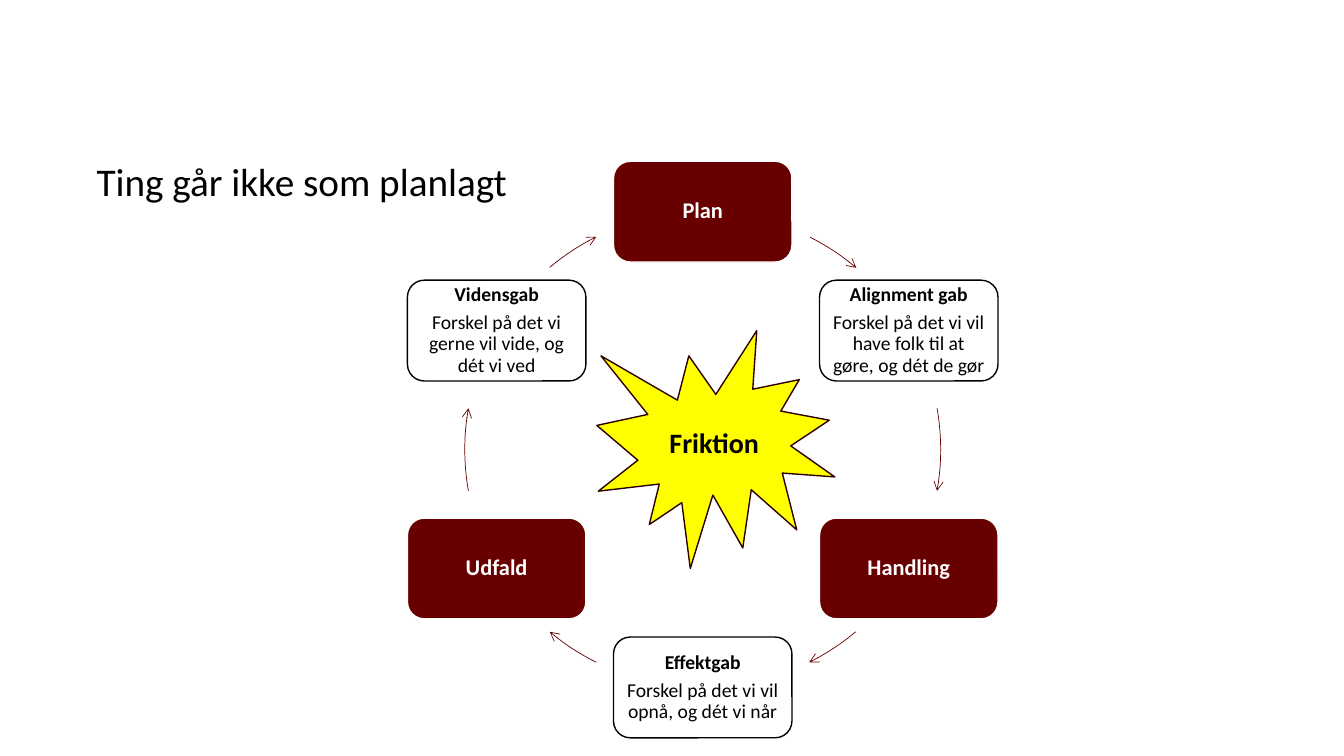
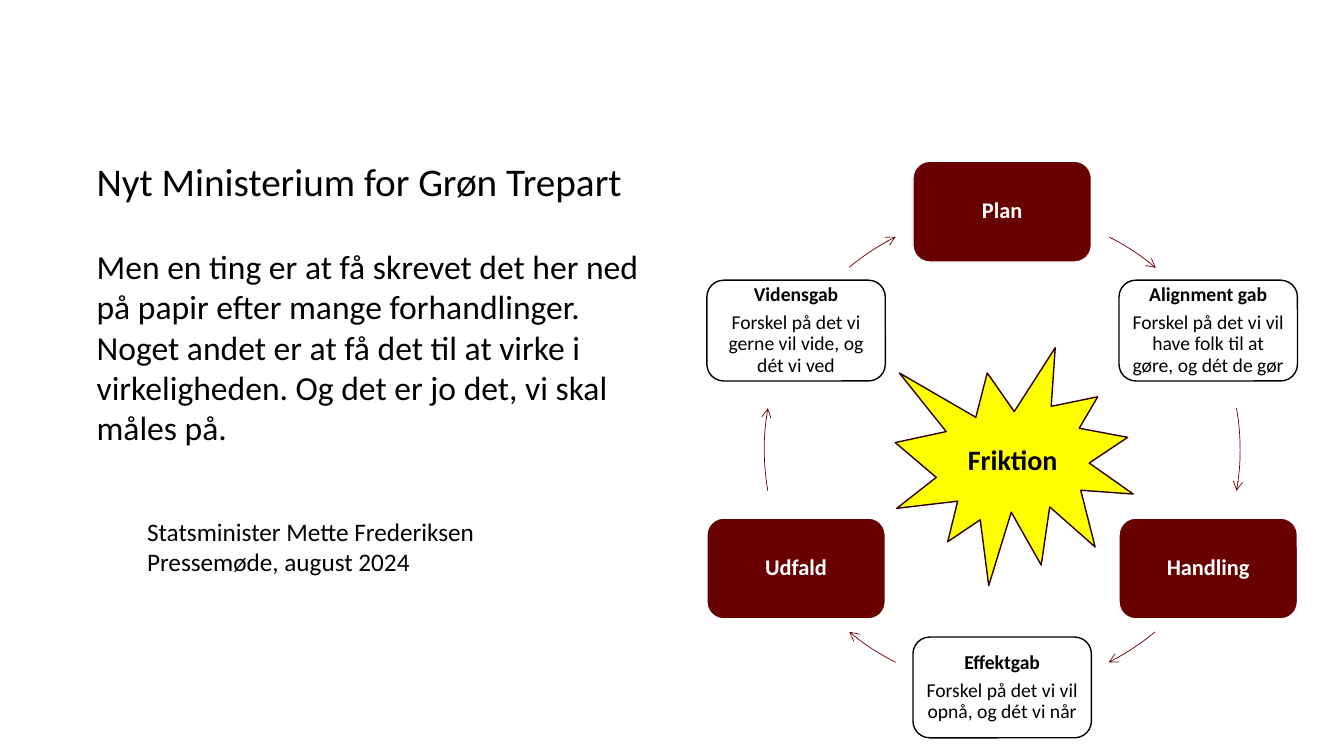
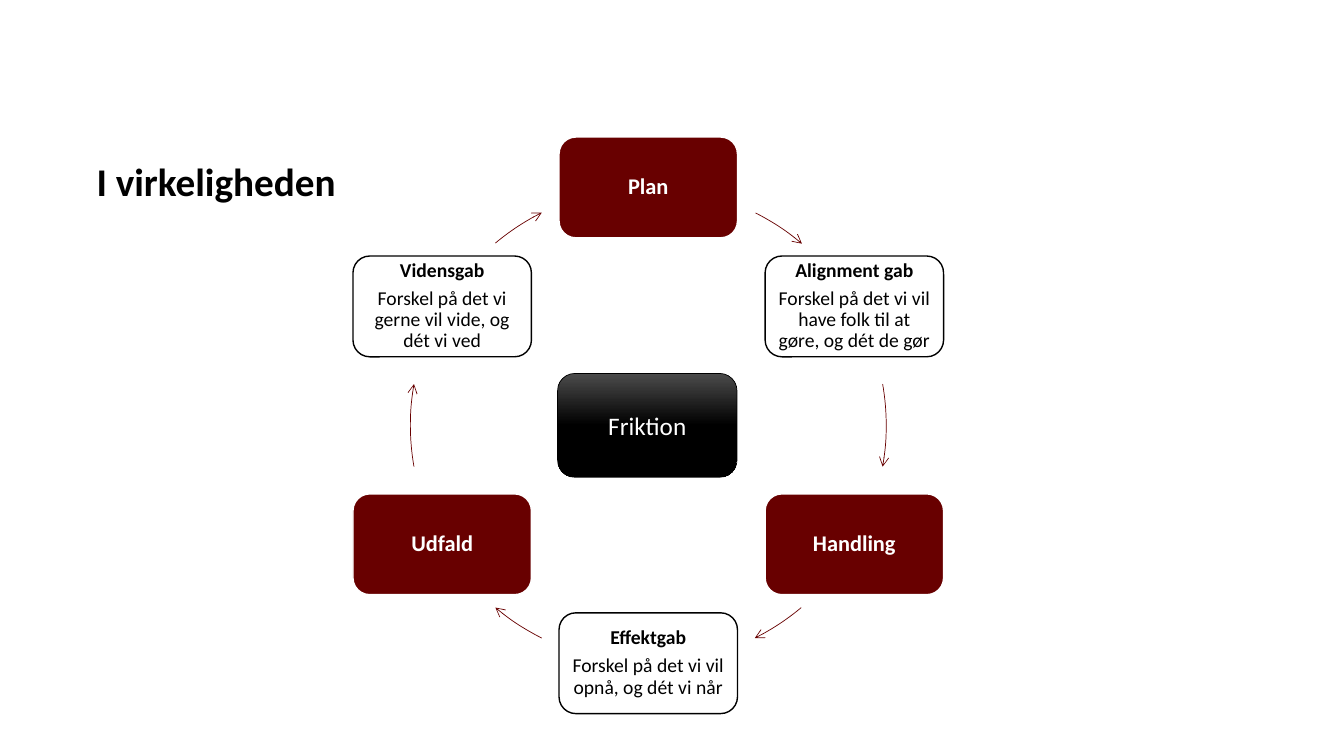
from dataclasses import dataclass
from math import cos, radians, sin

from lxml.etree import SubElement
from pptx import Presentation
from pptx.dml.color import RGBColor
from pptx.enum.shapes import MSO_SHAPE
from pptx.enum.text import MSO_ANCHOR, PP_ALIGN
from pptx.oxml.ns import qn
from pptx.util import Inches, Pt

FONT = "Calibri"
BLACK = "000000"
WHITE = "FFFFFF"
MAROON = "680000"
DARK_MAROON = "2E0000"
YELLOW = "FFFF00"
GLOSS = "4B4B4B"

RADIUS = 2.36
NODE_WIDTH, NODE_HEIGHT = 1.77, 1.0
SEAL_SIZE = 2.36


@dataclass(frozen=True)
class Node:
    heading: str
    detail: str = ""


@dataclass(frozen=True)
class Arc:
    start: float  # degrees clockwise from three o'clock
    end: float


# Clockwise from the top, one node every 60 degrees
NODES = [
    Node("Plan"),
    Node("Alignment gab", "Forskel på det vi vil have folk til at gøre, og dét de gør"),
    Node("Handling"),
    Node("Effektgab", "Forskel på det vi vil opnå, og dét vi når"),
    Node("Udfald"),
    Node("Vidensgab", "Forskel på det vi gerne vil vide, og dét vi ved"),
]
# Each arrow follows the node with the same index
ARCS = [Arc(296.8, 310.2), Arc(350, 10), Arc(50, 63.4),
        Arc(116.6, 130), Arc(170, 190), Arc(230, 243.4)]


def colour(value: str) -> RGBColor:
    return RGBColor.from_string(value)


def style(para, size: float, ink: str = BLACK, bold: bool = False) -> None:
    for span in para.runs:
        span.font.name = FONT
        span.font.size = Pt(size)
        span.font.bold = bold
        span.font.color.rgb = colour(ink)


def add_box(page, kind, center_x: float, center_y: float, width: float, height: float):
    """Add a preset shape around its centre, without a shadow."""
    box = page.shapes.add_shape(
        kind, Inches(center_x - width / 2), Inches(center_y - height / 2),
        Inches(width), Inches(height))
    box.shadow.inherit = False
    return box


def paint(box, fill: str, line: str, weight: float = 1) -> None:
    box.fill.solid()
    box.fill.fore_color.rgb = colour(fill)
    box.line.color.rgb = colour(line)
    box.line.width = Pt(weight)


def add_text(page, left: float, top: float, width: float, height: float, text: str):
    box = page.shapes.add_textbox(Inches(left), Inches(top), Inches(width), Inches(height))
    box.text_frame.word_wrap = True
    box.text_frame.text = text
    return box.text_frame


def add_title(page, text: str, bold: bool = False) -> None:
    frame = add_text(page, 0.86, 1.21, 11.5, 0.87, text)
    frame.vertical_anchor = MSO_ANCHOR.BOTTOM
    frame.paragraphs[0].line_spacing = 0.9
    style(frame.paragraphs[0], 28, bold=bold)


def add_node(page, node: Node, center_x: float, center_y: float) -> None:
    box = add_box(page, MSO_SHAPE.ROUNDED_RECTANGLE, center_x, center_y,
                  NODE_WIDTH, NODE_HEIGHT)
    is_gap = bool(node.detail)
    paint(box, *((WHITE, BLACK) if is_gap else (MAROON, WHITE)))
    size, ink, inset = (14, BLACK, 0.06) if is_gap else (16, WHITE, 0.07)

    frame = box.text_frame
    frame.word_wrap = True
    frame.vertical_anchor = MSO_ANCHOR.MIDDLE
    frame.margin_left = frame.margin_right = Inches(inset)
    frame.margin_top = frame.margin_bottom = Inches(inset)
    frame.text = f"{node.heading}\n{node.detail}" if is_gap else node.heading
    for index, para in enumerate(frame.paragraphs):
        para.alignment = PP_ALIGN.CENTER
        para.line_spacing = 0.9
        para.space_after = Pt(size * 0.35)
        style(para, size, ink, bold=index == 0)


def add_arc(page, arc: Arc, center_x: float, center_y: float) -> None:
    box = add_box(page, MSO_SHAPE.ARC, center_x, center_y, 2 * RADIUS, 2 * RADIUS)
    # Adjustments count in units of 100000, angles in units of 60000
    box.adjustments[0] = arc.start * 0.6
    box.adjustments[1] = arc.end * 0.6
    box.fill.background()
    box.line.color.rgb = colour(MAROON)
    box.line.width = Pt(0.5)
    SubElement(box.line._get_or_add_ln(), qn("a:tailEnd"), type="arrow")


def add_cycle(page, center_x: float, center_y: float) -> None:
    for index, (node, arc) in enumerate(zip(NODES, ARCS)):
        angle = radians(60 * index)
        add_node(page, node, center_x + RADIUS * sin(angle), center_y - RADIUS * cos(angle))
        add_arc(page, arc, center_x, center_y)


def add_friction_label(box, size: float, ink: str, bold: bool) -> None:
    frame = box.text_frame
    frame.vertical_anchor = MSO_ANCHOR.MIDDLE
    frame.text = "Friktion"
    frame.paragraphs[0].alignment = PP_ALIGN.CENTER
    style(frame.paragraphs[0], size, ink, bold)


def add_seal(page, center_x: float, center_y: float) -> None:
    box = add_box(page, MSO_SHAPE.EXPLOSION1, center_x, center_y, SEAL_SIZE, SEAL_SIZE)
    paint(box, YELLOW, DARK_MAROON)
    add_friction_label(box, 20, BLACK, True)


def add_black_box(page, center_x: float, center_y: float) -> None:
    box = add_box(page, MSO_SHAPE.ROUNDED_RECTANGLE, center_x, center_y, 1.78, 1.03)
    paint(box, BLACK, BLACK, 0.5)
    box.fill.gradient()
    box.fill.gradient_angle = 270
    for stop, (position, shade) in zip(box.fill.gradient_stops, [(0, GLOSS), (0.5, BLACK)]):
        stop.position = position
        stop.color.rgb = colour(shade)
    add_friction_label(box, 18, WHITE, False)


def add_quote(page) -> None:
    frame = add_text(
        page, 0.86, 2.39, 5.61, 3.7,
        "Men en ting er at få skrevet det her ned på papir efter mange forhandlinger. "
        "Noget andet er at få det til at virke i virkeligheden. "
        "Og det er jo det, vi skal måles på.\n"
        "Statsminister Mette Frederiksen\n"
        "Pressemøde, august 2024")
    quote, *source = frame.paragraphs
    style(quote, 24)
    for para in source:
        para.level = 1
        para._p.get_or_add_pPr().set("marL", str(Inches(0.5)))
        style(para, 18)
    source[0].space_before = Pt(49)


def main() -> None:
    deck = Presentation()
    deck.slide_width, deck.slide_height = Inches(13.33), Inches(7.5)
    plan_page, quote_page, reality_page = (
        deck.slides.add_slide(deck.slide_layouts[6]) for _ in range(3))

    # Slide 1: things do not go as planned
    add_cycle(plan_page, 6.97, 4.46)
    add_title(plan_page, "Ting går ikke som planlagt")
    add_seal(plan_page, 7.1, 4.46)

    # Slide 2: quote beside the cycle
    add_cycle(quote_page, 9.94, 4.46)
    add_title(quote_page, "Nyt Ministerium for Grøn Trepart")
    add_seal(quote_page, 10.06, 4.63)
    add_quote(quote_page)

    # Slide 3: the cycle in reality
    add_cycle(reality_page, 6.43, 4.22)
    add_title(reality_page, "I virkeligheden", bold=True)
    add_black_box(reality_page, 6.42, 4.22)

    deck.save("out.pptx")


if __name__ == "__main__":
    main()
